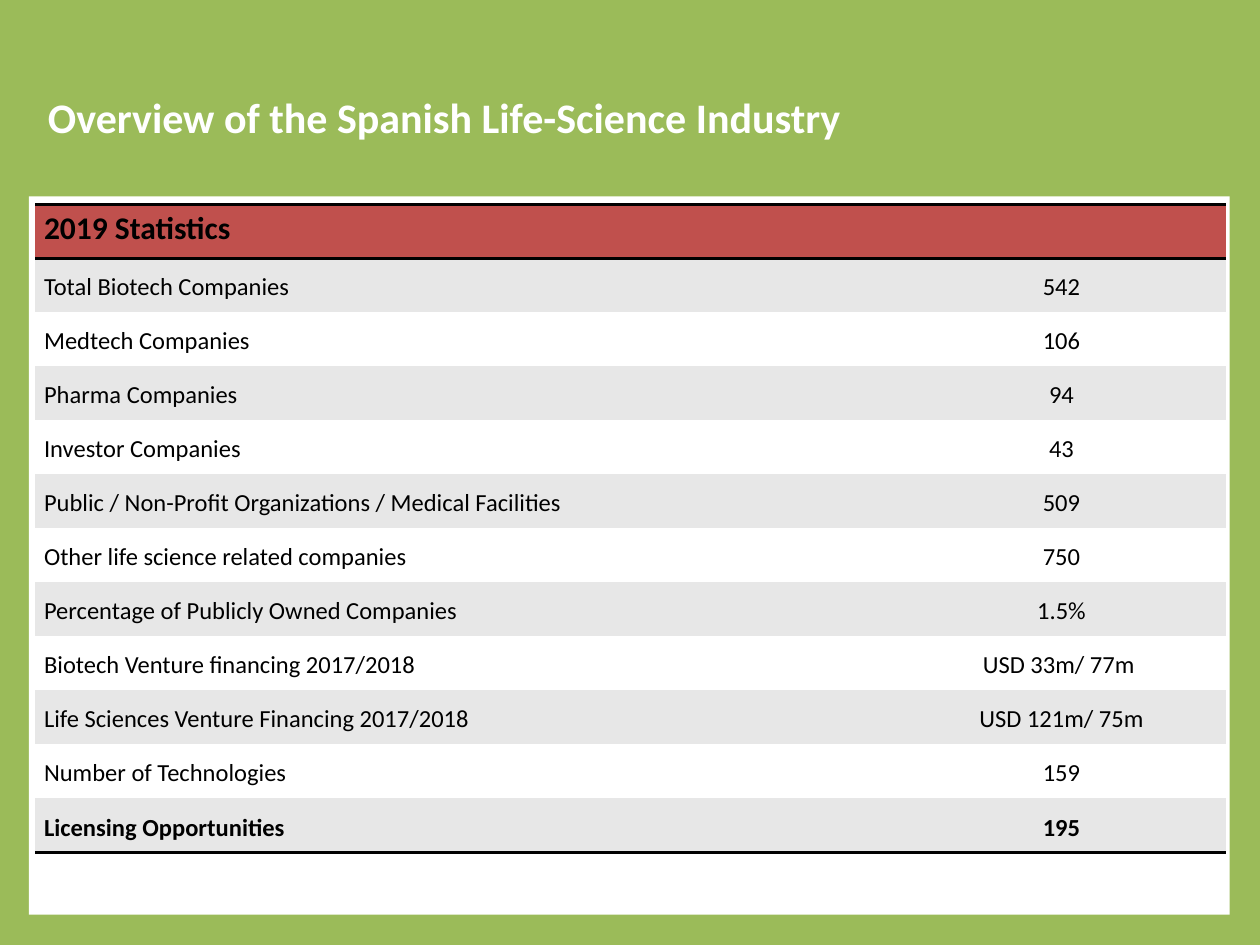
from pptx import Presentation
from pptx.dml.color import RGBColor
from pptx.enum.shapes import MSO_SHAPE
from pptx.enum.text import MSO_ANCHOR, PP_ALIGN
from pptx.oxml import parse_xml
from pptx.oxml.ns import nsdecls
from pptx.util import Inches, Pt

GREEN = RGBColor(0x9B, 0xBB, 0x59)
RED = RGBColor(0xC0, 0x50, 0x4D)
GREY = RGBColor(0xE7, 0xE7, 0xE7)
WHITE = RGBColor(0xFF, 0xFF, 0xFF)
BLACK = RGBColor(0, 0, 0)
FONT = "Calibri"
NO_STYLE = "{2D5ABB26-0587-4C30-8999-92F81FD0307C}"
LEFT = Inches(0.28)
COLS = [Inches(6.84), Inches(2.61)]
ROW = Inches(0.429)

STATS = [
    ("2019 Statistics", ""),
    ("Total Biotech Companies", "542"),
    ("Medtech Companies", "106"),
    ("Pharma Companies", "94"),
    ("Investor Companies", "43"),
    ("Public / Non-Profit Organizations / Medical Facilities", "509"),
    ("Other life science related companies", "750"),
    ("Percentage of Publicly Owned Companies", "1.5%"),
    ("Biotech Venture financing 2017/2018", "USD 33m/ 77m "),
    ("Life Sciences Venture Financing 2017/2018", "USD 121m/ 75m"),
    ("Number of Technologies", "159"),
    ("Licensing Opportunities", "195"),
]
LAST = len(STATS) - 1


def style(para, size, color, bold):
    para.font.name = FONT
    para.font.size = Pt(size)
    para.font.bold = bold
    para.font.color.rgb = color


def rule(cell, side):
    cell._tc.get_or_add_tcPr().append(parse_xml(
        f'<a:ln{side} {nsdecls("a")} w="{Pt(2)}"><a:solidFill>'
        f'<a:srgbClr val="{BLACK}"/></a:solidFill></a:ln{side}>'))


# Slide and background
deck = Presentation()
deck.slide_width, deck.slide_height = Inches(10), Inches(7.5)
slide = deck.slides.add_slide(deck.slide_layouts[5])
slide.background.fill.solid()
slide.background.fill.fore_color.rgb = GREEN

# Title
title = slide.shapes.title
title.left, title.top = LEFT, Inches(0.3)
title.width, title.height = Inches(9), Inches(1.25)
title.text_frame.text = "Overview of the Spanish Life-Science Industry"
title.text_frame.vertical_anchor = MSO_ANCHOR.MIDDLE
para = title.text_frame.paragraphs[0]
para.alignment = PP_ALIGN.LEFT
style(para, 24, WHITE, True)

# White panel
panel = slide.shapes.add_shape(
    MSO_SHAPE.RECTANGLE, Inches(0.23), Inches(1.56), Inches(9.53), Inches(5.7))
panel.shadow.inherit = False
panel.fill.solid()
panel.fill.fore_color.rgb = WHITE
panel.line.fill.background()

# Statistics table
table = slide.shapes.add_table(
    len(STATS), 2, LEFT, Inches(1.62), sum(COLS), ROW * len(STATS)).table
table.horz_banding = table.first_row = False
table._tbl.tblPr[0].text = NO_STYLE
for col, width in zip(table.columns, COLS):
    col.width = width
table.cell(0, 0).merge(table.cell(0, 1))

for r, stat in enumerate(STATS):
    table.rows[r].height = ROW
    head = r == 0
    for c, text in enumerate(stat):
        cell = table.cell(r, c)
        cell.margin_left = cell.margin_right = Inches(0.07)
        cell.margin_top = cell.margin_bottom = 0
        cell.vertical_anchor = MSO_ANCHOR.TOP if head else MSO_ANCHOR.MIDDLE
        if head:
            rule(cell, "T")
        if r in (0, LAST):
            rule(cell, "B")
        cell.fill.solid()
        cell.fill.fore_color.rgb = RED if head else GREY if r % 2 else WHITE
        cell.text = text
        para = cell.text_frame.paragraphs[0]
        para.line_spacing = 1.15
        para.alignment = PP_ALIGN.CENTER if c else PP_ALIGN.LEFT
        style(para, 18 if head else 14, BLACK, r in (0, LAST))

deck.save("out.pptx")
